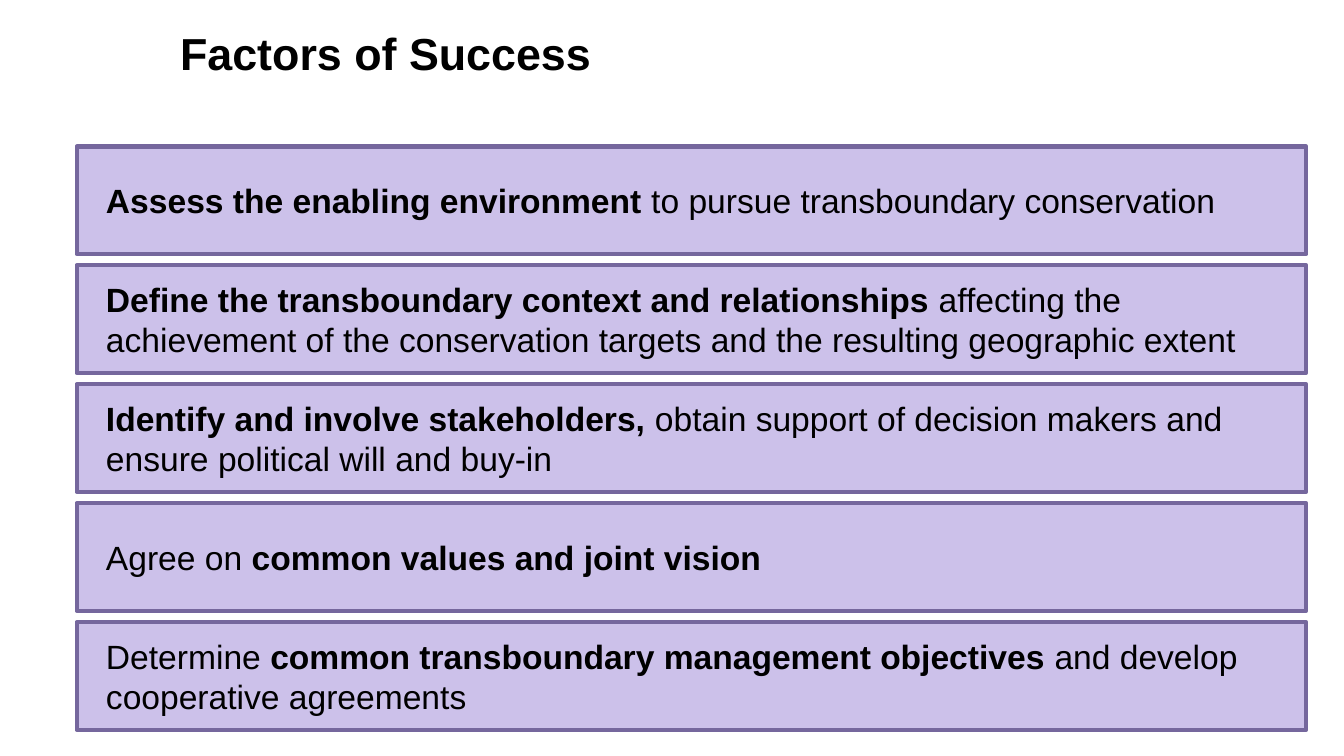
from lxml import etree
from pptx import Presentation
from pptx import util as u
from pptx.dml.color import RGBColor
from pptx.enum import shapes, text
from pptx.oxml.ns import qn


def paint(fill, color, opacity=100):
    fill.solid()
    fill.fore_color.rgb = RGBColor.from_string(color)
    if opacity < 100:
        srgb = fill._xPr.find(qn("a:solidFill"))[0]
        etree.SubElement(srgb, qn("a:alpha")).set("val", str(opacity * 1000))


def style(run, size, bold):
    run.font.name = "Arial"
    run.font.size = u.Pt(size)
    run.font.bold = bold
    paint(run.font.fill, "000000")


prs = Presentation()
prs.slide_width, prs.slide_height = u.Inches(10), u.Inches(10 * 9 / 16)
slide = prs.slides.add_slide(prs.slide_layouts[5])

heading = slide.shapes.title
heading.left, heading.top = u.Inches(1.24), u.Inches(0.14)
heading.width, heading.height = u.Inches(8.8), u.Inches(0.5)
paint(heading.fill, "FFFFFF", 55)
heading.text_frame.text = "Factors of Success"
heading.text_frame.vertical_anchor = text.MSO_ANCHOR.MIDDLE
heading.text_frame.auto_size = text.MSO_AUTO_SIZE.SHAPE_TO_FIT_TEXT
heading.text_frame.paragraphs[0].alignment = text.PP_ALIGN.LEFT
style(heading.text_frame.paragraphs[0].runs[0], 24, True)

factors = [
    [("Assess the enabling environment ", True),
     ("to pursue transboundary conservation", False)],
    [("Define the transboundary context and relationships ", True),
     ("affecting the achievement of the conservation targets "
      "and the resulting geographic extent", False)],
    [("Identify and involve stakeholders, ", True),
     ("obtain support of decision makers and ensure political will and buy-in", False)],
    [("Agree on ", False), ("common values and joint vision", True)],
    [("Determine", False),
     (" common transboundary management objectives ", True),
     ("and develop cooperative agreements", False)],
]
first_top, last_top = 1.09, 4.63
pitch = (last_top - first_top) / (len(factors) - 1)

for row, phrases in enumerate(factors):
    factor = slide.shapes.add_shape(
        shapes.MSO_SHAPE.RECTANGLE, u.Inches(0.57), u.Inches(first_top + row * pitch),
        u.Inches(9.15), u.Inches(0.8))
    factor.shadow.inherit = False
    paint(factor.fill, "C0B2E5", 80)
    paint(factor.line.fill, "75679D")
    factor.line.width = u.Pt(2.25)

    frame = factor.text_frame
    frame.word_wrap = True
    frame.vertical_anchor = text.MSO_ANCHOR.MIDDLE
    frame.margin_left = frame.margin_right = u.Inches(0.1)
    frame.margin_top = frame.margin_bottom = u.Inches(0.1)

    sentence = frame.paragraphs[0]
    sentence.alignment = text.PP_ALIGN.LEFT
    sentence.space_after = u.Pt(6)
    sentence._p.get_or_add_pPr().set("marL", str(u.Inches(0.12)))
    for words, bold in phrases:
        phrase = sentence.add_run()
        phrase.text = words
        style(phrase, 18, bold)

prs.save("out.pptx")
